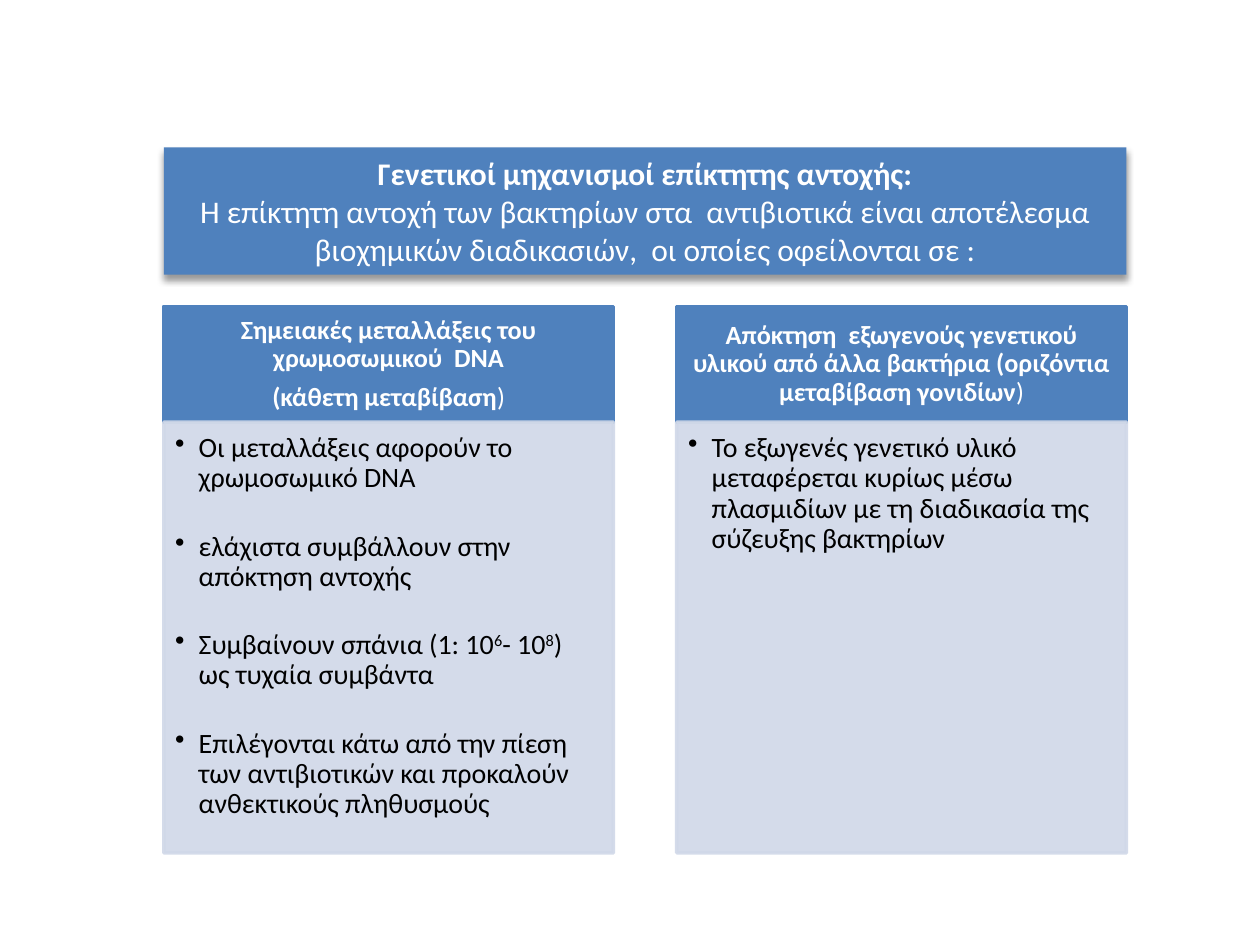
"""Build the slide on the genetic mechanisms of acquired resistance."""
from dataclasses import dataclass

from lxml import etree
from pptx import Presentation
from pptx.dml.color import RGBColor
from pptx.enum.shapes import MSO_SHAPE
from pptx.enum.text import MSO_ANCHOR, PP_ALIGN
from pptx.oxml.ns import qn
from pptx.util import Pt

RECTANGLE = MSO_SHAPE.RECTANGLE
MIDDLE, TOP = MSO_ANCHOR.MIDDLE, MSO_ANCHOR.TOP
CENTER, LEFT = PP_ALIGN.CENTER, PP_ALIGN.LEFT


@dataclass(frozen=True)
class Theme:
    """Colours, font and type sizes of the slide."""
    font: str = "Calibri"
    blue: str = "4F81BD"
    pale: str = "D0D8E8"
    white: str = "FFFFFF"
    black: str = "000000"
    title_size: int = 18
    header_size: int = 15
    body_size: int = 16


THEME = Theme()
COLUMN_LEFT, COLUMN_WIDTH, COLUMN_STEP = 93.6, 257, 293.1
TITLE_TOP, TITLE_HEIGHT = 84.2, 72.8
HEADER_TOP, HEADER_HEIGHT = 175, 66.2
BODY_HEIGHT = 246.2
BULLET_INDENT = 13.5

BOLD, PLAIN, RAISED = {"bold": True}, {"bold": False}, {"raised": True}
TITLE = [
    [("Γενετικοί μηχανισμοί επίκτητης αντοχής:", BOLD)],
    [("Η επίκτητη αντοχή των βακτηρίων στα  αντιβιοτικά είναι αποτέλεσμα "
      "βιοχημικών διαδικασιών,  οι οποίες οφείλονται σε :", PLAIN)],
]
COLUMNS = [
    (
        [[("Σημειακές μεταλλάξεις του χρωμοσωμικού  DNA", BOLD)],
         [("(κάθετη μεταβίβαση", BOLD), (")", PLAIN)]],
        [[("Οι μεταλλάξεις αφορούν το χρωμοσωμικό DNA", PLAIN)],
         [("ελάχιστα συμβάλλουν στην απόκτηση αντοχής", PLAIN)],
         [("Συμβαίνουν σπάνια (1: 10", PLAIN), ("6", RAISED), ("- 10", PLAIN),
          ("8", RAISED), (") ως τυχαία συμβάντα", PLAIN)],
         [("Επιλέγονται κάτω από την πίεση των αντιβιοτικών και προκαλούν "
           "ανθεκτικούς πληθυσμούς", PLAIN)]],
    ),
    (
        [[("Απόκτηση  εξωγενούς γενετικού υλικού από άλλα βακτήρια "
           "(οριζόντια μεταβίβαση γονιδίων", BOLD), (")", PLAIN)]],
        [[("Το εξωγενές γενετικό υλικό μεταφέρεται κυρίως μέσω πλασμιδίων "
           "με τη διαδικασία της σύζευξης βακτηρίων", PLAIN)]],
    ),
]


def set_attributes(target, values):
    """Set every attribute named in values on target."""
    for name, value in values.items():
        setattr(target, name, value)


def add_box(slide, frame, color, outlined=True):
    """Add a filled rectangle without shadow."""
    shape = slide.shapes.add_shape(RECTANGLE, *map(Pt, frame))
    shape.shadow.inherit = False
    shape.fill.solid()
    shape.fill.fore_color.rgb = RGBColor.from_string(color)
    if outlined:
        shape.line.color.rgb = RGBColor.from_string(color)
        shape.line.width = Pt(2)
    else:
        shape.line.fill.background()
    return shape


def make_translucent(shape, percent):
    """Give the fill and line of a shape the same opacity."""
    for color in shape.element.spPr.iter(qn("a:srgbClr")):
        etree.SubElement(color, qn("a:alpha"), val=str(percent * 1000))


def add_drop_shadow(shape):
    """Add a soft shadow below a shape."""
    effects = shape.element.spPr.find(qn("a:effectLst"))
    shadow = etree.SubElement(
        effects, qn("a:outerShdw"), blurRad=str(Pt(4)), dist=str(Pt(3)),
        dir="5400000", rotWithShape="0")
    color = etree.SubElement(shadow, qn("a:srgbClr"), val=THEME.black)
    etree.SubElement(color, qn("a:alpha"), val="40000")


def add_bullet(paragraph):
    """Give a paragraph a hanging bullet."""
    properties = paragraph._p.get_or_add_pPr()
    properties.set("marL", str(Pt(BULLET_INDENT)))
    properties.set("indent", str(-Pt(BULLET_INDENT)))
    etree.SubElement(properties, qn("a:buChar"), char="•")


def write_text(shape, paragraphs, size, color, margins, anchor=MIDDLE,
               bullets=False, **spacing):
    """Write paragraphs of styled runs into a shape."""
    frame = shape.text_frame
    names = ("margin_left", "margin_top", "margin_right", "margin_bottom")
    set_attributes(frame, dict(zip(names, map(Pt, margins))))
    set_attributes(frame, {"word_wrap": True, "vertical_anchor": anchor})
    for index, runs in enumerate(paragraphs):
        paragraph = frame.add_paragraph() if index else frame.paragraphs[0]
        set_attributes(paragraph, {"alignment": LEFT if bullets else CENTER, **spacing})
        if bullets:
            add_bullet(paragraph)
        for text, style in runs:
            run = paragraph.add_run()
            run.text = text
            set_attributes(run.font, {"name": THEME.font, "size": Pt(size),
                                      "bold": style.get("bold", False)})
            run.font.color.rgb = RGBColor.from_string(color)
            if style.get("raised"):
                run._r.get_or_add_rPr().set("baseline", "30000")


def add_title(slide):
    """Add the title band across both columns."""
    width = COLUMN_STEP + COLUMN_WIDTH
    band = add_box(slide, (COLUMN_LEFT, TITLE_TOP, width, TITLE_HEIGHT),
                   THEME.blue, outlined=False)
    add_drop_shadow(band)
    write_text(band, TITLE, THEME.title_size, THEME.white, (7.2, 3.6, 7.2, 3.6))


def add_column(slide, left, heading, points):
    """Add a heading box with its bulleted body below."""
    header = add_box(slide, (left, HEADER_TOP, COLUMN_WIDTH, HEADER_HEIGHT), THEME.blue)
    write_text(header, heading, THEME.header_size, THEME.white, (8.6, 5, 8.6, 5),
               line_spacing=0.9, space_after=Pt(6))
    body = add_box(slide, (left, HEADER_TOP + HEADER_HEIGHT, COLUMN_WIDTH, BODY_HEIGHT),
                   THEME.pale)
    make_translucent(body, 90)
    write_text(body, points, THEME.body_size, THEME.black, (6.5, 6.5, 8.6, 10),
               anchor=TOP, bullets=True, line_spacing=0.9, space_after=Pt(21.8))


def main():
    """Build and save the presentation."""
    presentation = Presentation()
    set_attributes(presentation, {"slide_width": Pt(720), "slide_height": Pt(540)})
    slide = presentation.slides.add_slide(presentation.slide_layouts[6])
    for index, (heading, points) in enumerate(COLUMNS):
        add_column(slide, COLUMN_LEFT + index * COLUMN_STEP, heading, points)
    add_title(slide)
    presentation.save("out.pptx")


if __name__ == "__main__":
    main()
